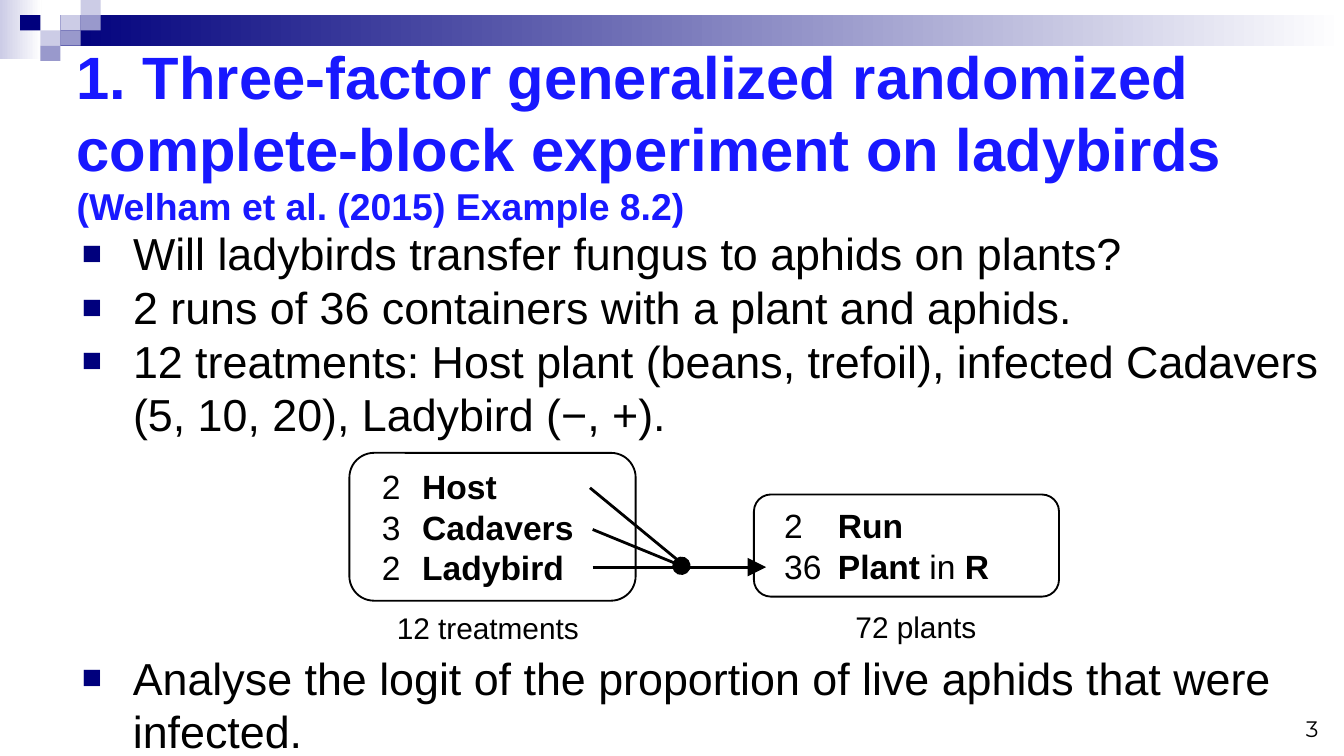
"""Build the slide on the ladybird experiment."""
from dataclasses import dataclass

from lxml.etree import SubElement
from pptx import Presentation
from pptx.dml.color import RGBColor
from pptx.enum.shapes import MSO_CONNECTOR, MSO_SHAPE
from pptx.enum.text import MSO_ANCHOR, MSO_AUTO_SIZE, PP_ALIGN
from pptx.oxml.ns import qn
from pptx.util import Inches, Pt


@dataclass(frozen=True)
class Theme:
    font: str = "Arial"
    number_font: str = "Montserrat"
    ink: str = "000000"
    heading: str = "1818FF"
    navy: str = "00007D"
    mid: str = "9999CC"
    pale: str = "CCCCE6"
    white: str = "FFFFFF"
    title: int = 32
    citation: int = 20
    body: int = 24
    factor: int = 18
    caption: int = 16
    number: int = 12


THEME = Theme()

TITLE = [
    ("1. Three-factor generalized randomized complete-block experiment on ladybirds ", THEME.title),
    ("(Welham et al. (2015) Example 8.2)", THEME.citation),
]
POINTS = [
    "Will ladybirds transfer fungus to aphids on plants?",
    "2 runs of 36 containers with a plant and aphids.",
    "12 treatments: Host plant (beans, trefoil), infected Cadavers (5, 10, 20), Ladybird (−, +).",
]
CONCLUSION = "Analyse the logit of the proportion of live aphids that were infected."
PANELS = [
    {
        "at": (2.6, 3.37, 2.13, 1.1), "margin": 0.39, "indent": 0.3,
        "factors": [
            [("2\t", False), ("Host", True)],
            [("3\t", False), ("Cadavers", True)],
            [("2\t", False), ("Ladybird", True)],
        ],
        "caption": "12 treatments", "caption_at": (2.77, 4.49, 1.72, 0.37),
    },
    {
        "at": (5.61, 3.68, 2.27, 0.76), "margin": 0.49, "indent": 0.4,
        "factors": [
            [("2\t", False), ("Run", True)],
            [("36\t", False), ("Plant", True), (" in ", False), ("R", True)],
        ],
        "caption": "72 plants", "caption_at": (5.75, 4.48, 2.13, 0.37),
    },
]
LINKS = [
    ((4.41, 4.22), (5.7, 4.22), "triangle"),
    ((4.41, 3.94), (5.07, 4.21), "oval"),
    ((4.39, 3.63), (5.07, 4.19), None),
]
BANDS = [
    ((0, 0, 0.31, 0.44), THEME.pale),
    ((0.45, 0.11, 9.55, 0.23), THEME.navy),
]
TILE_WIDTH, TILE_HEIGHT = 0.15, 0.34 / 3
TILES = [
    (3, 1, THEME.pale), (4, 0, THEME.pale), (4, 1, THEME.mid), (2, 2, THEME.pale),
    (1, 1, THEME.navy), (3, 2, THEME.mid), (2, 3, THEME.mid),
]


def place(box, at):
    box.left, box.top, box.width, box.height = map(Inches, at)


def add_block(page, kind, at, colour=None, fade=False):
    block = page.shapes.add_shape(kind, *map(Inches, at))
    block.shadow.inherit = False
    block.line.fill.background()
    if fade:
        block.fill.gradient()
        block.fill.gradient_angle = 0
        for stop, shade in zip(block.fill.gradient_stops, (colour, THEME.white)):
            stop.color.rgb = RGBColor.from_string(shade)
    elif colour:
        block.fill.solid()
        block.fill.fore_color.rgb = RGBColor.from_string(colour)
    else:
        block.fill.background()
    return block


def add_bullet(properties):
    colour = SubElement(properties, qn("a:buClr"))
    SubElement(colour, qn("a:srgbClr"), val=THEME.navy)
    SubElement(properties, qn("a:buSzPct"), val="75000")
    SubElement(properties, qn("a:buFont"), typeface=THEME.font)
    SubElement(properties, qn("a:buChar"), char="■")


def write(box, paragraphs, *, size, colour=THEME.ink, font=THEME.font, align=PP_ALIGN.LEFT,
          anchor=MSO_ANCHOR.TOP, before=0, margin=0, indent=0, bullet=False):
    """Fill a box with paragraphs of (text, bold[, size]) spans."""
    frame = box.text_frame
    frame.word_wrap = True
    frame.auto_size = MSO_AUTO_SIZE.NONE
    frame.vertical_anchor = anchor
    for index, spans in enumerate(paragraphs):
        para = frame.add_paragraph() if index else frame.paragraphs[0]
        para.alignment = align
        para.space_before = Pt(before)
        properties = para._p.get_or_add_pPr()
        properties.set("marL", str(Inches(margin)))
        properties.set("indent", str(-Inches(indent)))
        if bullet:
            add_bullet(properties)
        for text, bold, *own_size in spans:
            span = para.add_run()
            span.text = text
            span.font.name = font
            span.font.bold = bold
            span.font.size = Pt(own_size[0] if own_size else size)
            span.font.color.rgb = RGBColor.from_string(colour)


def add_text(page, at, text, **style):
    box = page.shapes.add_textbox(*map(Inches, at))
    write(box, [[(text, False)]], **style)


def add_panel(page, panel):
    box = add_block(page, MSO_SHAPE.ROUNDED_RECTANGLE, panel["at"])
    box.line.color.rgb = RGBColor.from_string(THEME.ink)
    box.line.width = Pt(1)
    write(box, panel["factors"], size=THEME.factor, anchor=MSO_ANCHOR.MIDDLE,
          margin=panel["margin"], indent=panel["indent"])
    add_text(page, panel["caption_at"], panel["caption"], size=THEME.caption,
             align=PP_ALIGN.CENTER, before=THEME.caption / 2)


def add_link(page, start, end, head):
    link = page.shapes.add_connector(MSO_CONNECTOR.STRAIGHT, *map(Inches, start + end))
    link.line.color.rgb = RGBColor.from_string(THEME.ink)
    link.line.width = Pt(1.5)
    if head:
        SubElement(link.line._get_or_add_ln(), qn("a:tailEnd"), type=head, w="lg", len="lg")
    SubElement(link._element.spPr, qn("a:effectLst"))


def main():
    deck = Presentation()
    deck.slide_width = Inches(10)
    deck.slide_height = deck.slide_width * 9 // 16
    page = deck.slides.add_slide(deck.slide_layouts[1])
    title, body = page.placeholders

    for at, colour in BANDS:
        add_block(page, MSO_SHAPE.RECTANGLE, at, colour, fade=True)
    for column, row, colour in TILES:
        at = (column * TILE_WIDTH, row * TILE_HEIGHT, TILE_WIDTH, TILE_HEIGHT)
        add_block(page, MSO_SHAPE.RECTANGLE, at, colour)

    place(title, (0.47, 0.28, 9.45, 1.43))
    write(title, [[(text, True, size) for text, size in TITLE]], size=THEME.title,
          colour=THEME.heading, anchor=MSO_ANCHOR.MIDDLE)
    listing = {"size": THEME.body, "margin": 0.38, "indent": 0.38, "bullet": True}
    place(body, (0.51, 1.63, 9.45, 1.73))
    write(body, [[(point, False)] for point in POINTS], **listing)

    for panel in PANELS:
        add_panel(page, panel)
    for start, end, head in LINKS:
        add_link(page, start, end, head)
    add_text(page, (0.51, 4.79, 9.49, 0.83), CONCLUSION, before=THEME.body / 5, **listing)
    add_text(page, (7.58, 5.19, 2.33, 0.38), "3", size=THEME.number, font=THEME.number_font,
             align=PP_ALIGN.RIGHT, anchor=MSO_ANCHOR.BOTTOM)
    deck.save("out.pptx")


if __name__ == "__main__":
    main()
